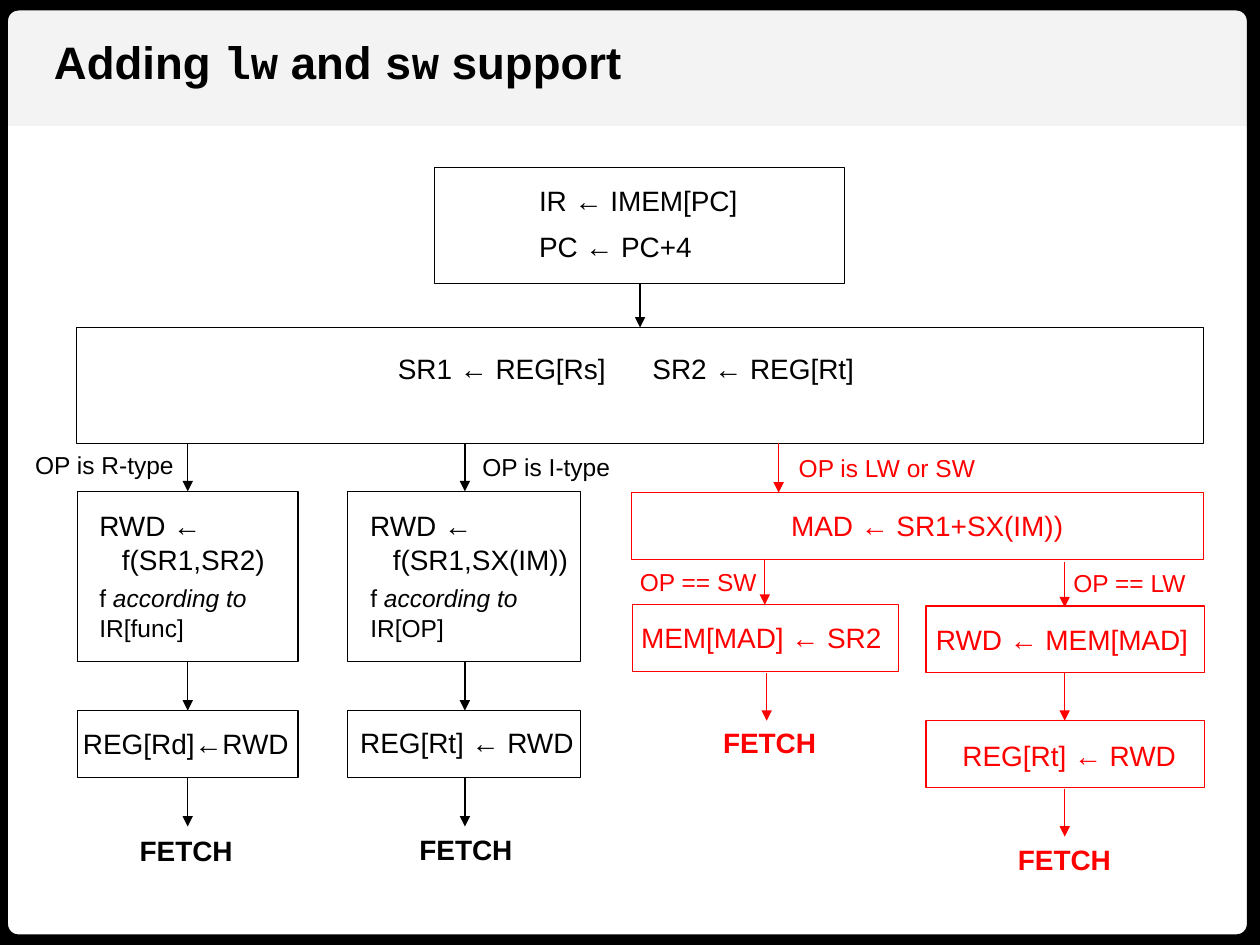
from lxml.etree import SubElement
from pptx import Presentation
from pptx.dml.color import RGBColor
from pptx.enum.shapes import MSO_CONNECTOR, MSO_SHAPE as Preset
from pptx.enum.text import MSO_AUTO_SIZE as AutoSize
from pptx.oxml.ns import qn
from pptx.util import Inches, Pt

BLACK = RGBColor(0x00, 0x00, 0x00)
RED = RGBColor(0xFF, 0x00, 0x00)
HEADER_GREY = RGBColor(0xF3, 0xF3, 0xF3)
COLUMNS, ROWS = 100, 75


class FlowSlide:
    """Draws on a grid of 100 columns by 75 rows."""
    font = "Arial"
    code_font = "Courier New"
    step_size, label_size, title_size = 16, 14, 26
    line_width = 0.75

    def __init__(self, deck):
        self.shapes = deck.slides.add_slide(deck.slide_layouts[6]).shapes
        self.column = deck.slide_width / COLUMNS
        self.row = deck.slide_height / ROWS

    def place(self, x, y):
        return round(x * self.column), round(y * self.row)

    def panel(self, left, top, width, height, preset=Preset.RECTANGLE,
              fill=None, line=None, line_width=line_width):
        panel = self.shapes.add_shape(
            preset, *self.place(left, top), *self.place(width, height))
        panel.shadow.inherit = False
        if fill is None:
            panel.fill.background()
        else:
            panel.fill.solid()
            panel.fill.fore_color.rgb = fill
        if line is None:
            panel.line.fill.background()
        else:
            panel.line.color.rgb = line
            panel.line.width = Pt(line_width)
        return panel

    def arrow(self, x, top, bottom, color=BLACK):
        arrow = self.shapes.add_connector(
            MSO_CONNECTOR.STRAIGHT, *self.place(x, top), *self.place(x, bottom))
        arrow.line.color.rgb = color
        arrow.line.width = Pt(self.line_width)
        SubElement(arrow.line._get_or_add_ln(), qn("a:tailEnd"), type="triangle")
        SubElement(arrow._element.spPr, qn("a:effectLst"))

    def text(self, left, top, width, height, *lines, color=BLACK,
             size=step_size, bold=False):
        """Each line is a string or a list of (string, font settings) runs."""
        box = self.shapes.add_textbox(
            *self.place(left, top), *self.place(width, height))
        frame = box.text_frame
        frame.word_wrap = False
        frame.auto_size = AutoSize.SHAPE_TO_FIT_TEXT
        for number, line in enumerate(lines):
            paragraph = frame.add_paragraph() if number else frame.paragraphs[0]
            font = paragraph.font
            font.name, font.size, font.bold = self.font, Pt(size), bold
            font.color.rgb = color
            for words, settings in [(line, {})] if isinstance(line, str) else line:
                run = paragraph.add_run()
                run.text = words
                for name, value in settings.items():
                    setattr(run.font, name, value)
        return frame

    def step(self, left, top, width, words, color=BLACK):
        self.text(left, top, width, 3.7, words, color=color)

    def label(self, left, top, width, words, color=BLACK):
        self.text(left, top, width, 3.4, words, color=color, size=self.label_size)

    def fetch(self, left, top, color=BLACK):
        self.text(left, top, 9.5, 3.7, "FETCH", color=color, bold=True)

    def execute(self, left, width, operation, selector):
        """Writes the result assignment and the field that selects f."""
        assignment = self.text(left, 39.9, width, 6.4, "RWD ←", operation)
        properties = assignment.paragraphs[1]._p.get_or_add_pPr()
        properties.set("marL", str(Inches(0.18)))
        properties.set("indent", "0")
        self.text(left, 45.8, 13.8, 5.7,
                  [("f", {}), (" according to", {"italic": True})],
                  selector, size=self.label_size)


def draw_frame(slide):
    slide.panel(0, 0, COLUMNS, 10, fill=HEADER_GREY)
    border = slide.panel(-0.2, 0, COLUMNS, ROWS, Preset.ROUNDED_RECTANGLE,
                         line=BLACK, line_width=12)
    border.adjustments[0] = 0.022
    code = {"name": slide.code_font}
    slide.text(3.3, 2.2, 47.5, 5.4,
               [("Adding ", {}), ("lw", code), (" and ", {}),
                ("sw", code), (" support", {})],
               size=slide.title_size, bold=True)


def draw_fetch_and_decode(slide):
    slide.panel(34.5, 13.3, 32.5, 9.2, line=BLACK)
    slide.step(41.8, 14.1, 18, "IR ← IMEM[PC]")
    slide.step(41.8, 17.7, 14.3, "PC ← PC+4")
    slide.arrow(50.8, 22.5, 26)
    slide.panel(6.1, 26, 89.4, 9.2, line=BLACK)
    slide.step(30.6, 27.4, 18.7, "SR1 ← REG[Rs]")
    slide.step(50.8, 27.4, 18.2, "SR2 ← REG[Rt]")


def draw_register_branches(slide):
    for left, width, axis in ((6.15, 17.5, 14.9), (27.6, 18.5, 36.9)):
        slide.panel(left, 39, width, 13.5, line=BLACK)
        slide.panel(left, 56.4, width, 5.3, line=BLACK)
        for top, bottom in ((35.2, 39), (52.5, 56.4), (61.7, 65.6)):
            slide.arrow(axis, top, bottom)
    slide.label(1.8, 35.2, 13.1, "OP is R-type")
    slide.execute(6.9, 15.4, "f(SR1,SR2)", "IR[func]")
    slide.step(5.6, 57.2, 18.5, "REG[Rd]←RWD")
    slide.fetch(10.1, 65.7)
    slide.label(37.3, 35.4, 12.2, "OP is I-type")
    slide.execute(28.4, 18, "f(SR1,SX(IM))", "IR[OP]")
    slide.step(27.6, 57.1, 19.2, "REG[Rt] ← RWD")
    slide.fetch(32.3, 65.6)


def draw_memory_branches(slide):
    for left, top, width in ((50.1, 39.1, 45.4), (50.2, 48, 21.1),
                             (73.5, 48.1, 22.1), (73.5, 57.2, 22.1)):
        slide.panel(left, top, width, 5.3, line=RED)
    for axis, top, bottom in ((61.8, 35.2, 39.1),
                              (60.7, 44.4, 48), (60.85, 53.4, 57.2),
                              (84.5, 44.6, 48.2), (84.5, 53.4, 57.2),
                              (84.5, 62.6, 66.4)):
        slide.arrow(axis, top, bottom, RED)
    for left, top, width, words in ((62.4, 35.5, 16.1, "OP is LW or SW"),
                                    (49.8, 44.5, 11.4, "OP == SW"),
                                    (84.2, 44.6, 11.4, "OP == LW")):
        slide.label(left, top, width, words, RED)
    for left, top, width, words in ((61.8, 39.9, 23.9, "MAD ← SR1+SX(IM))"),
                                    (49.9, 48.8, 21.4, "MEM[MAD] ← SR2"),
                                    (73.3, 48.9, 22.3, "RWD ← MEM[MAD]"),
                                    (75.4, 58.1, 19.2, "REG[Rt] ← RWD")):
        slide.step(left, top, width, words, RED)
    slide.fetch(56.4, 57.1, RED)
    slide.fetch(79.8, 66.4, RED)


def main():
    deck = Presentation()
    deck.slide_width, deck.slide_height = Inches(10), Inches(7.5)
    slide = FlowSlide(deck)
    draw_frame(slide)
    draw_fetch_and_decode(slide)
    draw_register_branches(slide)
    draw_memory_branches(slide)
    deck.save("out.pptx")


if __name__ == "__main__":
    main()
